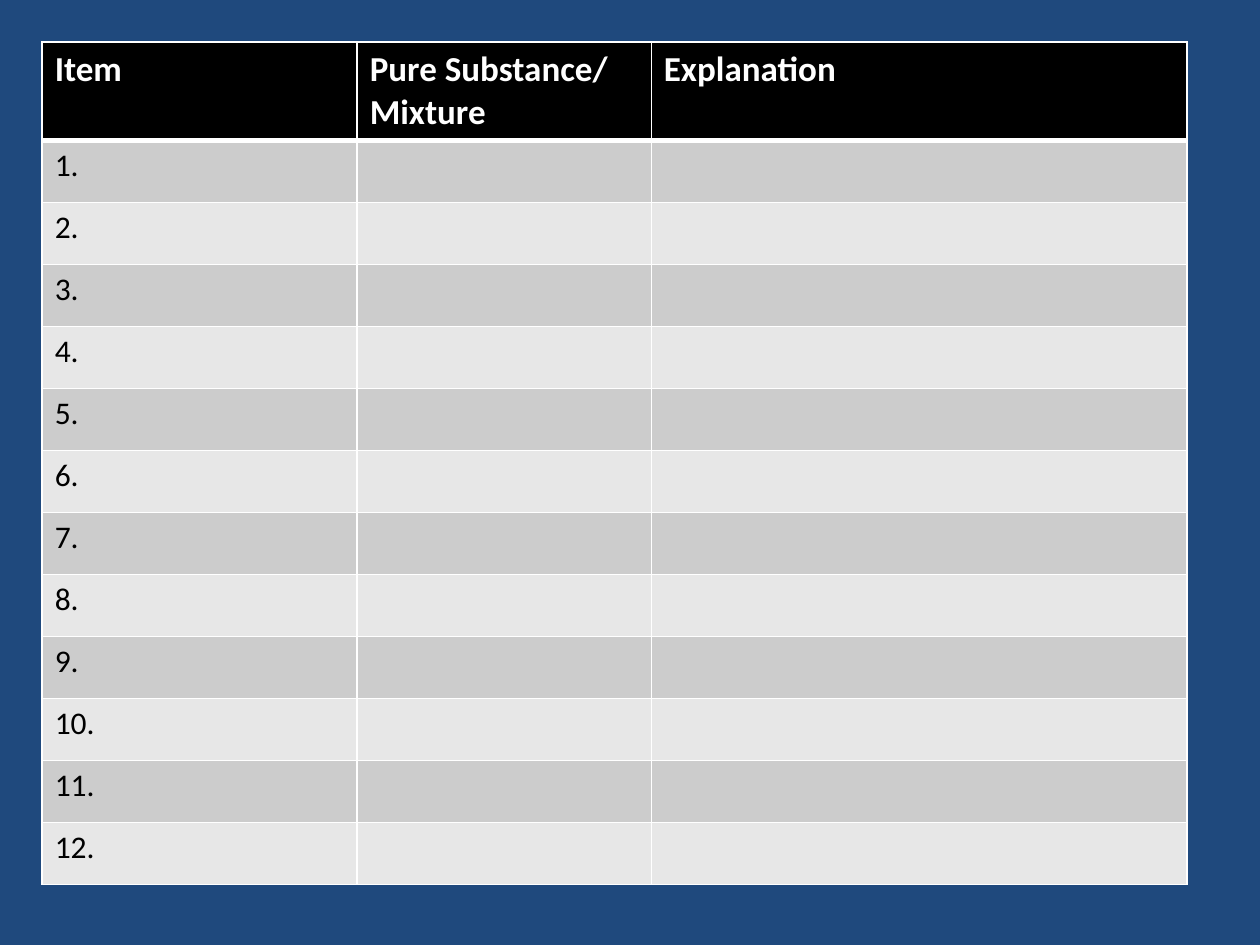
"""Build a worksheet slide for sorting items into pure substances and mixtures."""
from lxml.etree import SubElement
from pptx import Presentation
from pptx.dml.color import RGBColor
from pptx.oxml.ns import qn
from pptx.util import Cm, Pt

COLORS = {
    "background": "1F497D",
    "header": "000000",
    "odd": "CCCCCC",
    "even": "E7E7E7",
    "border": "FFFFFF",
    "header_text": "FFFFFF",
    "body_text": "000000",
}
HEADINGS = ["Item", "Pure Substance/ Mixture", "Explanation"]
COLUMN_WIDTHS = [6.35, 5.93, 10.8]
ITEM_COUNT = 12
HEADER_HEIGHT, ITEM_HEIGHT = 1.91, 1.25
HEADER_FONT = {"name": "Calibri", "size": Pt(20), "bold": True}
BODY_FONT = {"name": "Calibri", "size": Pt(18), "bold": False}


def add_border(cell, side, width):
    line = SubElement(cell._tc.get_or_add_tcPr(), qn(f"a:ln{side}"), w=str(Pt(width)))
    fill = SubElement(line, qn("a:solidFill"))
    SubElement(fill, qn("a:srgbClr"), val=COLORS["border"])


presentation = Presentation()
presentation.slide_width = Cm(25.4)
presentation.slide_height = Cm(19.05)
slide = presentation.slides.add_slide(presentation.slide_layouts[6])
slide.background.fill.solid()
slide.background.fill.fore_color.rgb = RGBColor.from_string(COLORS["background"])

table = slide.shapes.add_table(
    ITEM_COUNT + 1, len(HEADINGS), Cm(0.85), Cm(0.85),
    Cm(sum(COLUMN_WIDTHS)), Cm(HEADER_HEIGHT + ITEM_COUNT * ITEM_HEIGHT),
).table
table.horz_banding = False
for column, width in zip(table.columns, COLUMN_WIDTHS):
    column.width = Cm(width)

rows = [HEADINGS] + [[f"{number}.", "", ""] for number in range(1, ITEM_COUNT + 1)]
for row_index, texts in enumerate(rows):
    is_header = row_index == 0
    table.rows[row_index].height = Cm(HEADER_HEIGHT if is_header else ITEM_HEIGHT)
    fill_name = "header" if is_header else "odd" if row_index % 2 else "even"
    text_name = "header_text" if is_header else "body_text"
    border_widths = {
        "L": 1,
        "R": 1,
        "T": 3 if row_index == 1 else 1,
        "B": 3 if is_header else 1,
    }
    for column_index, text in enumerate(texts):
        cell = table.cell(row_index, column_index)
        for side, width in border_widths.items():
            add_border(cell, side, width)
        cell.fill.solid()
        cell.fill.fore_color.rgb = RGBColor.from_string(COLORS[fill_name])
        if text:
            run = cell.text_frame.paragraphs[0].add_run()
            run.text = text
            for attribute, value in (HEADER_FONT if is_header else BODY_FONT).items():
                setattr(run.font, attribute, value)
            run.font.color.rgb = RGBColor.from_string(COLORS[text_name])

presentation.save("out.pptx")
